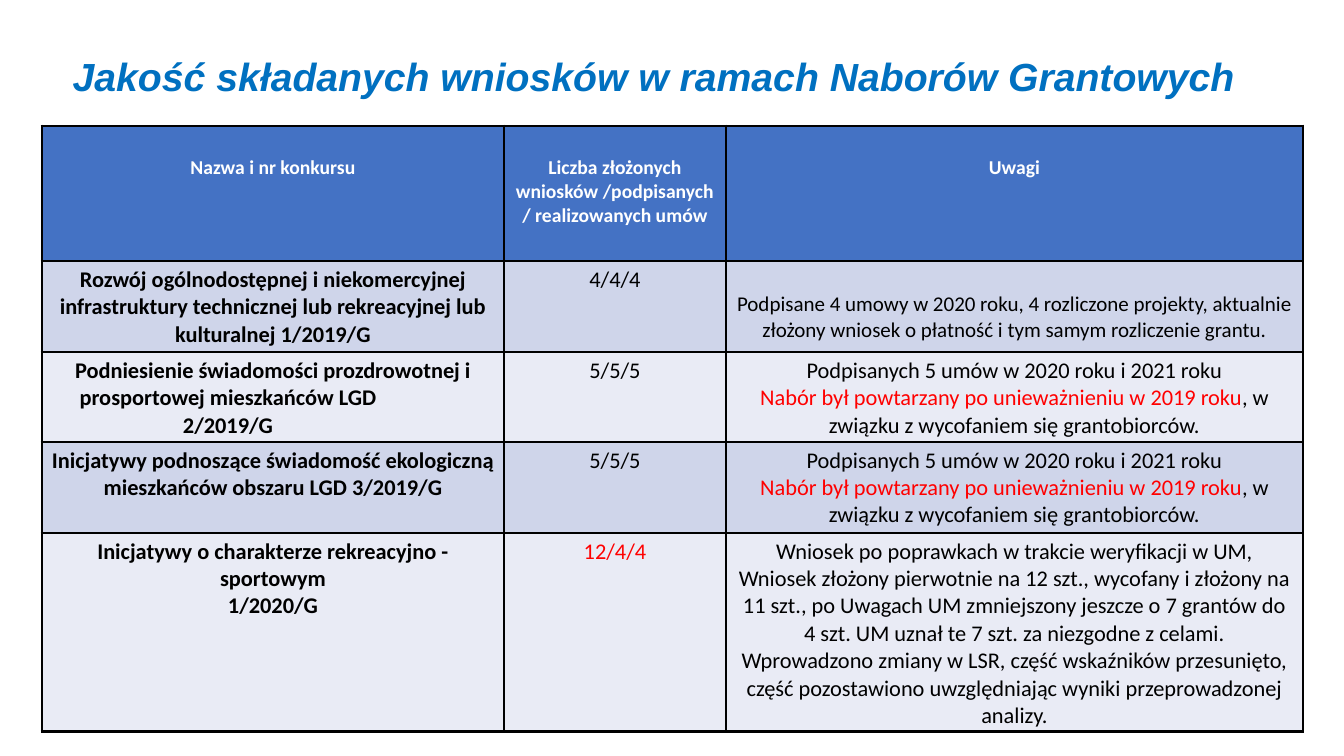
"""Build a slide with a table on the quality of grant applications."""
from lxml import etree
from pptx import Presentation
from pptx.dml.color import RGBColor
from pptx.enum.text import PP_ALIGN
from pptx.oxml.ns import qn
from pptx.util import Emu, Pt

CENTER = PP_ALIGN.CENTER
PX = 9071
SLIDE = (1344, 756)
COLORS = {"title": "0070C0", "head": "4472C4", "odd": "CFD5EA", "even": "E9EBF5",
          "white": "FFFFFF", "black": "000000", "red": "FF0000"}

TITLE = "Jakość składanych wniosków w ramach Naborów Grantowych"
TITLE_BOX = (0, 47, 1307, 55)
TITLE_FORMAT = {"name": "Arial", "size": Pt(28), "bold": True, "italic": True}

TABLE_AT = (42, 126)
COLS = [462, 222, 577]
SIDE_MARGINS = [9, 9, 10]
ROWS = [135, 91, 90, 91, 198]
BORDER_PT = 2.25
TOP, BOTTOM, HEAD_TOP, NOTE_TOP = 5, 2, 30, 31
INDENTED, RIGHT_INDENT = "prosportowej mieszkańców LGD", 90

HEADER = [["Nazwa i nr konkursu"],
          ["Liczba złożonych", "wniosków /podpisanych", "/ realizowanych umów"],
          ["Uwagi"]]
REPEATED = [[("Podpisanych 5 umów w 2020 roku i 2021 roku", "black")],
            [("Nabór był powtarzany po unieważnieniu w 2019 roku", "red"),
             (", w związku z wycofaniem się grantobiorców.", "black")]]
CONTESTS = [
    (["Rozwój ogólnodostępnej i niekomercyjnej infrastruktury technicznej "
      "lub rekreacyjnej lub kulturalnej 1/2019/G"],
     ("4/4/4", "black"),
     [[("Podpisane 4 umowy w 2020 roku, 4 rozliczone projekty, aktualnie złożony "
        "wniosek o płatność i tym samym rozliczenie grantu.", "black")]]),
    (["Podniesienie świadomości prozdrowotnej i", INDENTED, "2/2019/G"],
     ("5/5/5", "black"), REPEATED),
    (["Inicjatywy podnoszące świadomość ekologiczną mieszkańców obszaru LGD 3/2019/G"],
     ("5/5/5", "black"), REPEATED),
    (["Inicjatywy o charakterze rekreacyjno - sportowym", "1/2020/G"],
     ("12/4/4", "red"),
     [[("Wniosek po poprawkach w trakcie weryfikacji w UM, Wniosek złożony pierwotnie "
        "na 12 szt., wycofany i złożony na 11 szt., po Uwagach UM zmniejszony jeszcze "
        "o 7 grantów do 4 szt. UM uznał te 7 szt. za niezgodne z celami. Wprowadzono "
        "zmiany w LSR, część wskaźników przesunięto, część pozostawiono uwzględniając "
        "wyniki przeprowadzonej analizy.", "black")]]),
]


def px(n):
    return Emu(n * PX)


def rgb(name):
    return RGBColor.from_string(COLORS[name])


def lines(texts, color):
    return [[(text, color)] for text in texts]


def write(tf, paragraphs, formats):
    for i, runs in enumerate(paragraphs):
        p = tf.paragraphs[0] if i == 0 else tf.add_paragraph()
        p.alignment = CENTER
        for text, color in runs:
            r = p.add_run()
            r.text = text
            r.font.color.rgb = rgb(color)
            for key, value in formats.items():
                setattr(r.font, key, value)
        if p.text == INDENTED:
            p._p.get_or_add_pPr().set("marR", str(px(RIGHT_INDENT)))


def add_borders(cell):
    tc_pr = cell._tc.get_or_add_tcPr()
    for side in ("a:lnL", "a:lnR", "a:lnT", "a:lnB"):
        ln = etree.SubElement(tc_pr, qn(side), w=str(Pt(BORDER_PT)))
        fill = etree.SubElement(ln, qn("a:solidFill"))
        etree.SubElement(fill, qn("a:srgbClr"), val=COLORS["black"])


def fill_cell(cell, paragraphs, fill, side, size=16, bold=False, top=TOP):
    margins = {"margin_left": side, "margin_right": side,
               "margin_top": top, "margin_bottom": BOTTOM}
    for key, value in margins.items():
        setattr(cell, key, px(value))
    add_borders(cell)
    cell.fill.solid()
    cell.fill.fore_color.rgb = rgb(fill)
    write(cell.text_frame, paragraphs, {"name": "Calibri", "size": Pt(size), "bold": bold})


def add_contests(s):
    size = (sum(COLS), sum(ROWS))
    table = s.shapes.add_table(len(ROWS), len(COLS), *map(px, TABLE_AT + size)).table
    for col, width in zip(table.columns, COLS):
        col.width = px(width)
    for row, height in zip(table.rows, ROWS):
        row.height = px(height)
    for c, (label, side) in enumerate(zip(HEADER, SIDE_MARGINS)):
        fill_cell(table.cell(0, c), lines(label, "white"), "head", side, 14, True, HEAD_TOP)
    for i, (name, count, notes) in enumerate(CONTESTS, 1):
        fill = "odd" if i % 2 else "even"
        note_size, note_top = (15, NOTE_TOP) if i == 1 else (16, TOP)
        name_side, count_side, note_side = SIDE_MARGINS
        fill_cell(table.cell(i, 0), lines(name, "black"), fill, name_side, bold=True)
        fill_cell(table.cell(i, 1), [[count]], fill, count_side)
        fill_cell(table.cell(i, 2), notes, fill, note_side, note_size, top=note_top)


def main():
    prs = Presentation()
    prs.slide_width, prs.slide_height = map(px, SLIDE)
    s = prs.slides.add_slide(prs.slide_layouts[6])
    add_contests(s)
    tf = s.shapes.add_textbox(*map(px, TITLE_BOX)).text_frame
    tf.word_wrap = True
    write(tf, [[(TITLE, "title")]], TITLE_FORMAT)
    prs.save("out.pptx")


if __name__ == "__main__":
    main()
